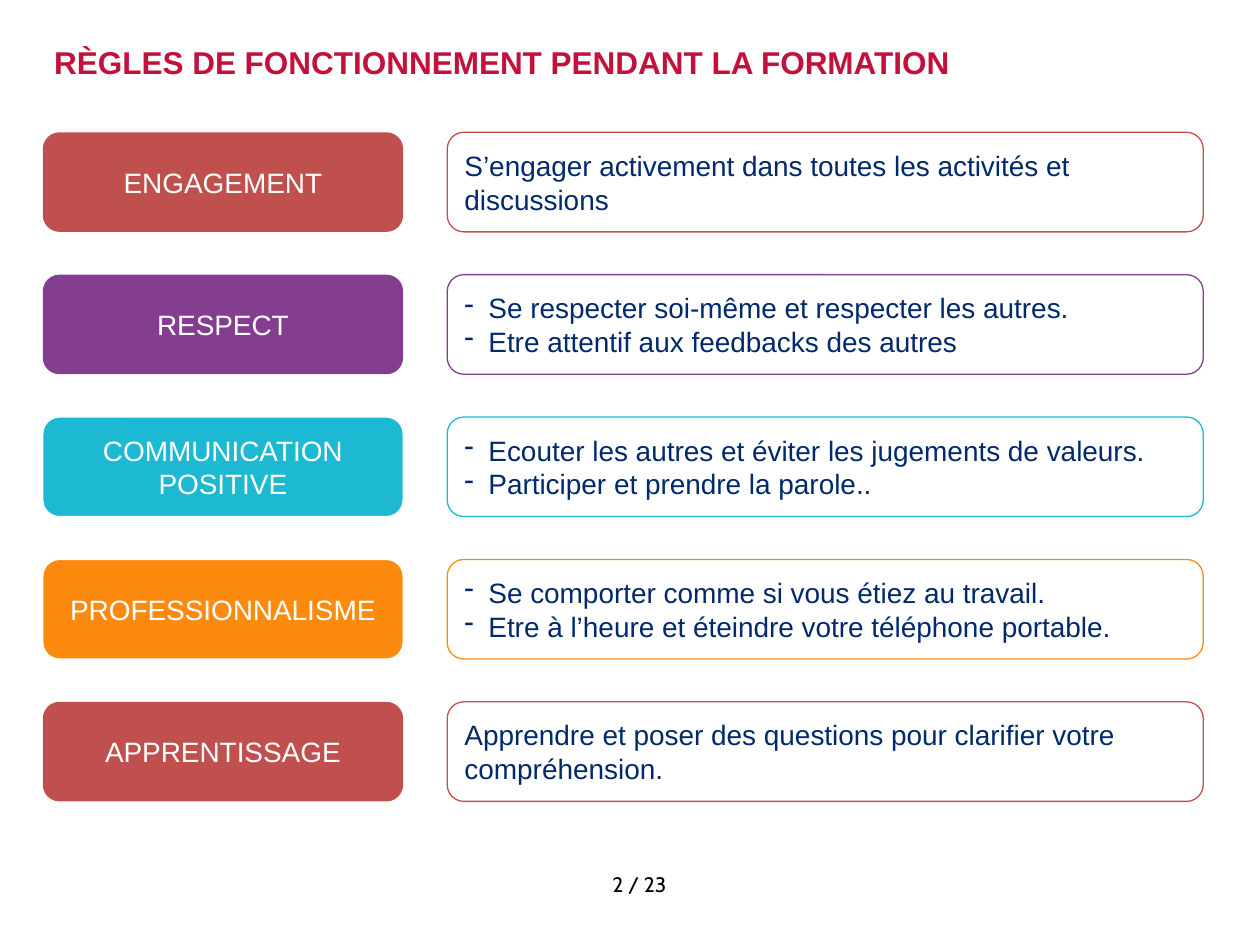
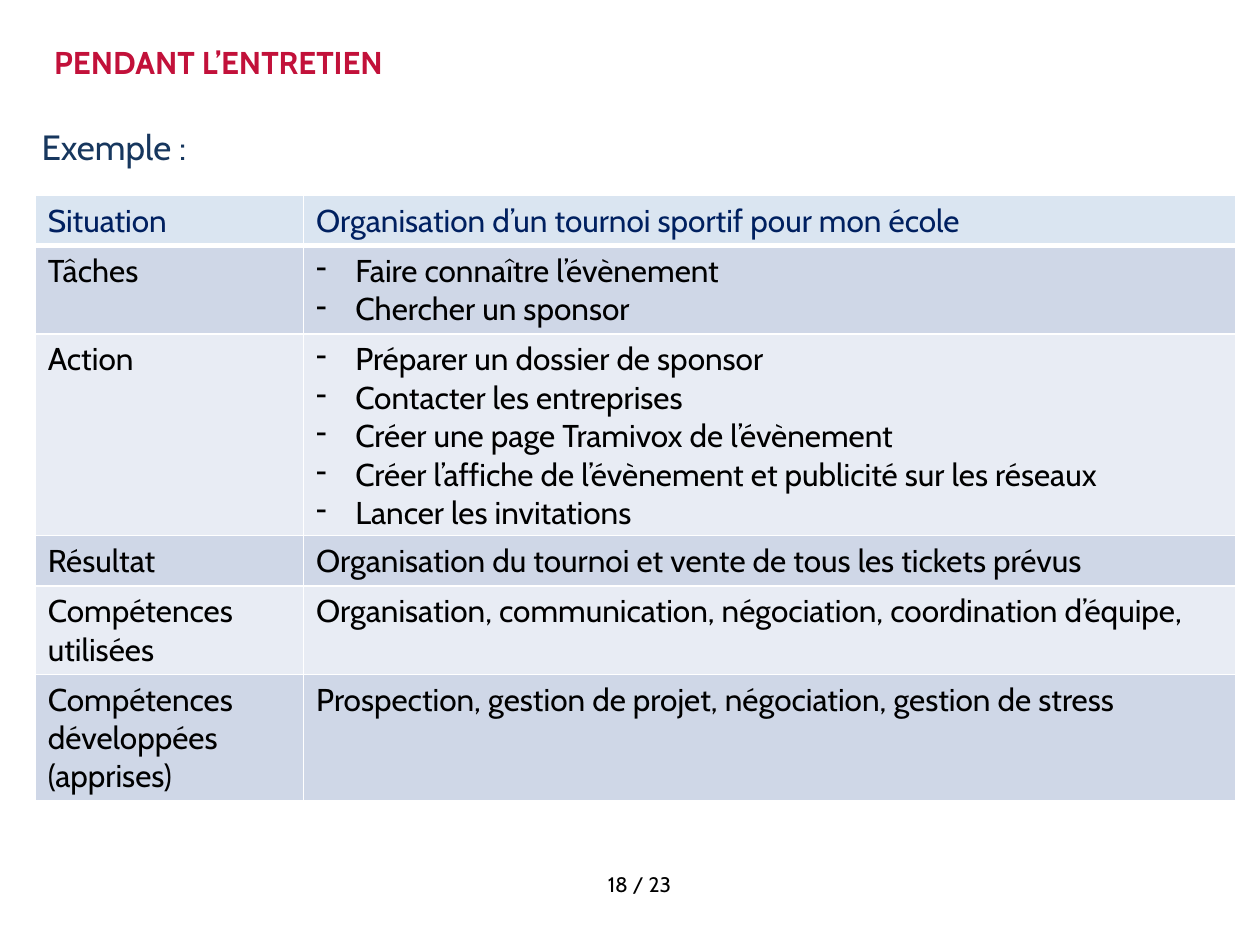
from lxml import etree
from pptx import Presentation
from pptx.dml.color import RGBColor
from pptx.enum.shapes import MSO_SHAPE
from pptx.enum.text import MSO_ANCHOR, PP_ALIGN
from pptx.oxml.ns import qn
from pptx.util import Inches, Pt

ROUND = MSO_SHAPE.ROUNDED_RECTANGLE
TOP, MIDDLE = MSO_ANCHOR.TOP, MSO_ANCHOR.MIDDLE
LEFT, CENTER, JUSTIFY = PP_ALIGN.LEFT, PP_ALIGN.CENTER, PP_ALIGN.JUSTIFY

ARIAL, CABIN = "Arial", "Cabin"
WHITE, BLACK, RED, NAVY = "FFFFFF", "000000", "C2113A", "002A6C"
BRICK, PLUM, TEAL, AMBER = "C0504D", "833E90", "1DB8D1", "FC8A0E"
SLATE, INK, HEAD, DARK, PALE = "17375E", "002060", "DAE5F1", "CFD7E7", "E8ECF4"
PAGES = 23

RULES = [
    ("ENGAGEMENT", BRICK, None,
     ["S’engager activement dans toutes les activités et discussions"]),
    ("RESPECT", PLUM, None,
     ["Se respecter soi-même et respecter les autres.",
      "Etre attentif aux feedbacks des autres"]),
    ("COMMUNICATION POSITIVE", TEAL, WHITE,
     ["Ecouter les autres et éviter les jugements de valeurs.",
      "Participer et prendre la parole.."]),
    ("PROFESSIONNALISME", AMBER, WHITE,
     ["Se comporter comme si vous étiez au travail.",
      "Etre à l’heure et éteindre votre téléphone portable."]),
    ("APPRENTISSAGE", BRICK, None,
     ["Apprendre et poser des questions pour clarifier votre compréhension."]),
]

STEPS = [
    ("Situation", 0.39, ["Organisation d’un tournoi sportif pour mon école"]),
    ("Tâches", 0.7, ["Faire connaître l’évènement", "Chercher un sponsor"]),
    ("Action", 1.6,
     ["Préparer un dossier de sponsor",
      "Contacter les entreprises",
      "Créer une page Tramivox de l’évènement",
      "Créer l’affiche de l’évènement et publicité sur les réseaux",
      "Lancer les invitations"]),
    ("Résultat", 0.4,
     ["Organisation du tournoi et vente de tous les tickets prévus"]),
    ("Compétences utilisées", 0.7,
     ["Organisation, communication, négociation, coordination d’équipe,"]),
    ("Compétences développées (apprises)", 1.0,
     ["Prospection, gestion de projet, négociation, gestion de stress"]),
]


def rgb(code):
    """Turn a hex string into a colour."""
    return RGBColor.from_string(code)


def place(shape, left, top, width, height):
    """Set a shape's position and size in inches."""
    shape.left, shape.top = Inches(left), Inches(top)
    shape.width, shape.height = Inches(width), Inches(height)


def bullet(para, indent, color):
    """Give a paragraph a hanging dash."""
    props = para._p.get_or_add_pPr()
    props.set("marL", str(Inches(indent)))
    props.set("indent", str(-Inches(indent)))
    tint = etree.SubElement(props, qn("a:buClr"))
    etree.SubElement(tint, qn("a:srgbClr"), val=color)
    etree.SubElement(props, qn("a:buChar"), char="-")


def write(frame, lines, font, size, color, align=LEFT, bold=False, indent=0.19):
    """Fill a text frame, with dashes when there are several lines."""
    frame.word_wrap = True
    frame.text = "\n".join(lines)
    for para in frame.paragraphs:
        para.alignment = align
        if len(lines) > 1:
            bullet(para, indent, color)
        for run in para.runs:
            run.font.name, run.font.size = font, Pt(size)
            run.font.bold, run.font.color.rgb = bold, rgb(color)


def start(deck, title, font, page):
    """Add a slide with its title and page number."""
    slide = deck.slides.add_slide(deck.slide_layouts[5])
    head = slide.shapes.title
    place(head, 0.33, 0.29, 9.33, 0.76)
    head.text_frame.vertical_anchor = TOP
    write(head.text_frame, [title], font, 18, RED, bold=True)
    foot = slide.shapes.add_textbox(
        Inches(4.38), Inches(6.87), Inches(1.39), Inches(0.31))
    write(foot.text_frame, [f"{page} / {PAGES}"], CABIN, 12, BLACK, CENTER)
    return slide


def card(slide, left, top, width, fill, edge):
    """Add a rounded card and return its text frame."""
    box = slide.shapes.add_shape(
        ROUND, Inches(left), Inches(top), Inches(width), Inches(0.79))
    box.shadow.inherit = False
    for part, color in ((box.fill, fill), (box.line.fill, edge)):
        if color:
            part.solid()
            part.fore_color.rgb = rgb(color)
        else:
            part.background()
    if edge:
        box.line.width = Pt(0.75)
    box.text_frame.vertical_anchor = MIDDLE
    return box.text_frame


def border(cell, row):
    """Draw white cell borders, thick under the header."""
    props = cell._tc.get_or_add_tcPr()
    thick = {(0, "B"), (1, "T")}
    for side in "LRTB":
        width = Pt(3 if (row, side) in thick else 1)
        line = etree.SubElement(props, qn(f"a:ln{side}"), w=str(width))
        fill = etree.SubElement(line, qn("a:solidFill"))
        etree.SubElement(fill, qn("a:srgbClr"), val=WHITE)


def intro(slide, text):
    """Add the lead-in panel behind the table."""
    box = slide.shapes.add_textbox(
        Inches(0.33), Inches(1.05), Inches(9.33), Inches(5.11))
    box.fill.solid()
    box.fill.fore_color.rgb = rgb(WHITE)
    frame = box.text_frame
    frame.margin_left = frame.margin_right = 0
    frame.margin_top = frame.margin_bottom = 0
    write(frame, [text], CABIN, 20, SLATE, JUSTIFY)
    frame.paragraphs[0].line_spacing = Pt(20)


def grid(slide):
    """Add the table of steps."""
    table = slide.shapes.add_table(
        len(STEPS), 2, Inches(0.28), Inches(1.55), Inches(9.53),
        Inches(sum(step[1] for step in STEPS))).table
    table.columns[0].width, table.columns[1].width = Inches(2.13), Inches(7.4)
    for row, (label, height, lines) in enumerate(STEPS):
        table.rows[row].height = Inches(height)
        color = BLACK if row else INK
        fill = (DARK if row % 2 else PALE) if row else HEAD
        for col, text in enumerate(([label], lines)):
            cell = table.cell(row, col)
            border(cell, row)
            cell.fill.solid()
            cell.fill.fore_color.rgb = rgb(fill)
            write(cell.text_frame, text, CABIN, 18, color, indent=0.31)


def rules(deck):
    """Build the slide of working rules."""
    slide = start(deck, "RÈGLES DE FONCTIONNEMENT PENDANT LA FORMATION", ARIAL, 2)
    for row, (label, color, edge, lines) in enumerate(RULES):
        top = 1.05 + 1.13 * row
        write(card(slide, 0.34, top, 2.86, color, edge),
              [label], ARIAL, 16, WHITE, CENTER)
        write(card(slide, 3.55, top, 6, None, color), lines, ARIAL, 16, NAVY)


def sample(deck):
    """Build the slide with the interview example."""
    slide = start(deck, "PENDANT L’ENTRETIEN", CABIN, 18)
    intro(slide, "Exemple :")
    grid(slide)


def main():
    """Build and save the deck."""
    deck = Presentation()
    deck.slide_width, deck.slide_height = Inches(10), Inches(7.5)
    rules(deck)
    sample(deck)
    deck.save("out.pptx")


if __name__ == "__main__":
    main()
